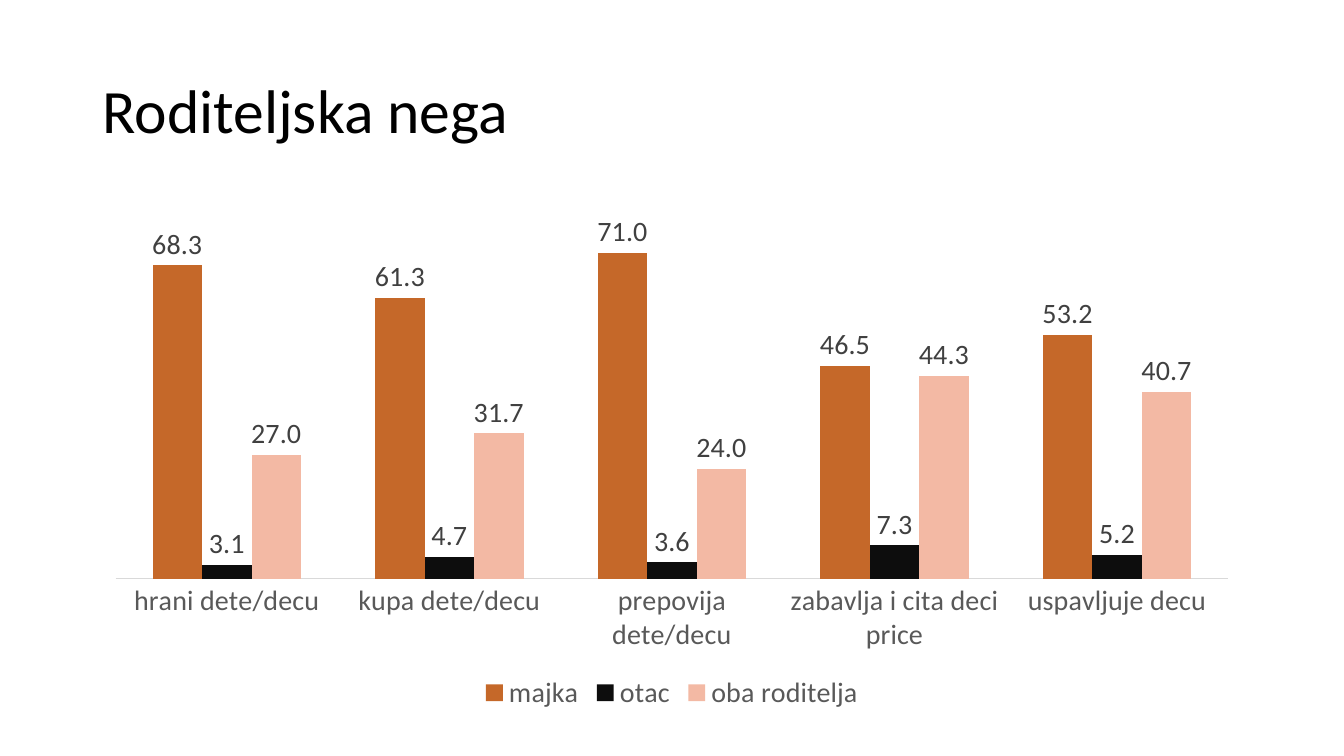
"""Build a slide with a clustered column chart on parental care."""
from pptx import Presentation
from pptx.chart.data import CategoryChartData
from pptx.dml.color import RGBColor
from pptx.enum import chart as ch, text
from pptx.util import Pt

TITLE = "Roditeljska nega"
CATEGORIES = ["hrani dete/decu", "kupa dete/decu", "prepovija dete/decu",
              "zabavlja i cita deci price", "uspavljuje decu"]
SERIES = [
    ("majka", (68.3, 61.3, 71.0, 46.5, 53.2), RGBColor(0xC5, 0x68, 0x29)),
    ("otac", (3.1, 4.7, 3.6, 7.3, 5.2), RGBColor(0x0D, 0x0D, 0x0D)),
    ("oba roditelja", (27.0, 31.7, 24.0, 44.3, 40.7), RGBColor(0xF3, 0xB9, 0xA4)),
]
BLACK = RGBColor(0, 0, 0)
LABEL_GREY = RGBColor(0x40, 0x40, 0x40)
AXIS_GREY = RGBColor(0x59, 0x59, 0x59)
LINE_GREY = RGBColor(0xD9, 0xD9, 0xD9)
FONT = "Calibri"
NUMBER_FORMAT = "###0.0"
LEFT, WIDTH = Pt(66), Pt(828)


def style(font, size, color):
    font.name, font.size, font.bold = FONT, Pt(size), False
    font.color.rgb = color


def add_title(s):
    sp = s.shapes.title
    sp.left, sp.top, sp.width, sp.height = LEFT, Pt(28.75), WIDTH, Pt(104.4)
    tf = sp.text_frame
    tf.text = TITLE
    tf.word_wrap = True
    tf.vertical_anchor = text.MSO_ANCHOR.MIDDLE
    p = tf.paragraphs[0]
    p.alignment = text.PP_ALIGN.LEFT
    p.line_spacing = 0.9
    style(p.runs[0].font, 44, BLACK)


def add_care_chart(s):
    data = CategoryChartData(number_format=NUMBER_FORMAT)
    data.categories = CATEGORIES
    for name, values, _ in SERIES:
        data.add_series(name, values)
    chart = s.shapes.add_chart(ch.XL_CHART_TYPE.COLUMN_CLUSTERED,
                               LEFT, Pt(144), WIDTH, Pt(367.2), data).chart
    style(chart.font, 20, BLACK)
    chart.has_title = False
    chart.has_legend = True
    chart.legend.position = ch.XL_LEGEND_POSITION.BOTTOM
    chart.legend.include_in_layout = False
    style(chart.legend.font, 20, AXIS_GREY)

    axis = chart.category_axis
    axis.major_tick_mark = axis.minor_tick_mark = ch.XL_TICK_MARK.NONE
    axis.format.line.color.rgb = LINE_GREY
    axis.format.line.width = Pt(0.75)
    style(axis.tick_labels.font, 20, AXIS_GREY)
    values = chart.value_axis
    values.visible = False
    values.has_major_gridlines = False
    values.minimum_scale, values.maximum_scale = 0, 80

    plot = chart.plots[0]
    plot.gap_width, plot.overlap = 150, 0
    plot.vary_by_categories = False
    for series, (_, _, color) in zip(plot.series, SERIES):
        series.format.fill.solid()
        series.format.fill.fore_color.rgb = color
        labels = series.data_labels
        labels.show_value = True
        labels.position = ch.XL_LABEL_POSITION.OUTSIDE_END
        labels.number_format = NUMBER_FORMAT
        labels.number_format_is_linked = False
        style(labels.font, 20, LABEL_GREY)


def main():
    prs = Presentation()
    prs.slide_width, prs.slide_height = Pt(960), Pt(540)
    s = prs.slides.add_slide(prs.slide_layouts[5])
    add_title(s)
    add_care_chart(s)
    prs.save("out.pptx")


if __name__ == "__main__":
    main()
